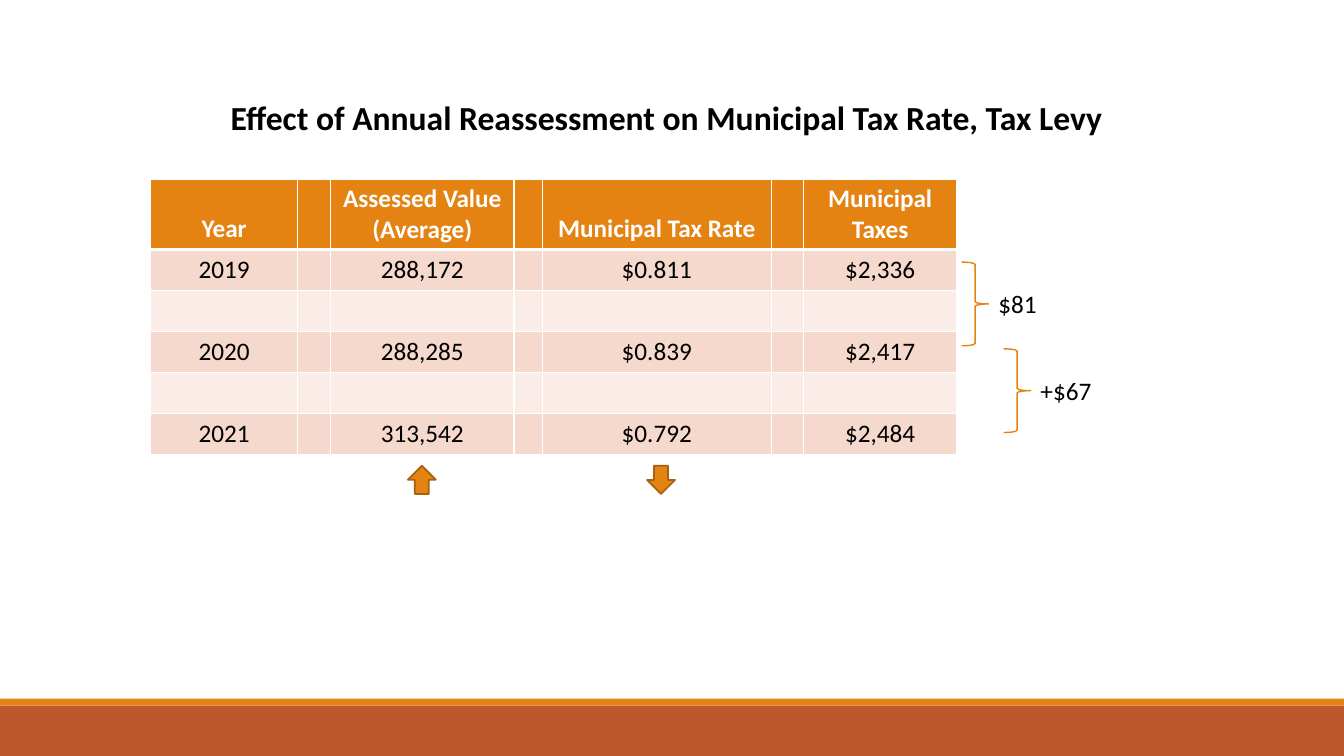
from dataclasses import dataclass

from lxml import etree
from pptx import Presentation
from pptx import util as u
from pptx.dml.color import RGBColor
from pptx.enum import shapes, text
from pptx.oxml.ns import qn


@dataclass(frozen=True)
class Theme:
    font: str = "Calibri"
    title_size: int = 24
    body_size: int = 18
    ink: str = "000000"
    paper: str = "FFFFFF"
    orange: str = "E48312"
    orange_dark: str = "A9610D"
    rust: str = "BD582C"
    band_dark: str = "F5D9CC"
    band_light: str = "FAEDE7"


class SlideBuilder:
    """Places elements; every length is a percentage of the slide's size."""

    def __init__(self, presentation, theme):
        self.theme = theme
        self.width = presentation.slide_width
        self.height = presentation.slide_height
        self.slide = presentation.slides.add_slide(presentation.slide_layouts[6])

    def across(self, share):
        return round(self.width * share / 100)

    def down(self, share):
        return round(self.height * share / 100)

    def box(self, left, top, width, height):
        return self.across(left), self.down(top), self.across(width), self.down(height)

    def shape(self, kind, place, fill=None, line=None, weight=1):
        shape = self.slide.shapes.add_shape(kind, *self.box(*place))
        shape.shadow.inherit = False
        if fill:
            shape.fill.solid()
            shape.fill.fore_color.rgb = RGBColor.from_string(fill)
        else:
            shape.fill.background()
        if line:
            shape.line.color.rgb = RGBColor.from_string(line)
            shape.line.width = u.Pt(weight)
        else:
            shape.line.fill.background()

    def set_words(self, text_frame, words, size, color, bold=False, align=text.PP_ALIGN.LEFT):
        text_frame.text = words
        for paragraph in text_frame.paragraphs:
            paragraph.alignment = align
            for run in paragraph.runs:
                run.font.name = self.theme.font
                run.font.size = u.Pt(size)
                run.font.bold = bold
                run.font.color.rgb = RGBColor.from_string(color)

    def label(self, words, place, size, bold=False, wrap=False):
        text_frame = self.slide.shapes.add_textbox(*self.box(*place)).text_frame
        text_frame.word_wrap = wrap
        self.set_words(text_frame, words, size, self.theme.ink, bold)

    def borders(self, cell, weights):
        properties = cell._tc.get_or_add_tcPr()
        for index, (side, weight) in enumerate(weights.items()):
            line = etree.Element(qn(f"a:ln{side}"), w=str(u.Pt(weight)))
            fill = etree.SubElement(line, qn("a:solidFill"))
            etree.SubElement(fill, qn("a:srgbClr"), val=self.theme.paper)
            properties.insert(index, line)

    def table(self, rows, left, top, widths, heights):
        theme = self.theme
        place = self.box(left, top, sum(widths), sum(heights))
        table = self.slide.shapes.add_table(len(rows), len(widths), *place).table
        for column, width in zip(table.columns, widths):
            column.width = self.across(width)
        for row, height in zip(table.rows, heights):
            row.height = self.down(height)
        for r, row in enumerate(rows):
            header = r == 0
            band = theme.band_dark if r % 2 else theme.band_light
            for c, words in enumerate(row):
                cell = table.cell(r, c)
                cell.fill.solid()
                cell.fill.fore_color.rgb = RGBColor.from_string(theme.orange if header else band)
                if header:
                    cell.vertical_anchor = text.MSO_ANCHOR.BOTTOM
                self.borders(cell, {"L": 1, "R": 1, "T": 3 if r == 1 else 1, "B": 3 if header else 1})
                self.set_words(cell.text_frame, words, theme.body_size,
                               theme.paper if header else theme.ink, header, text.PP_ALIGN.CENTER)


def spaced(values):
    """Puts an empty narrow column between the values."""
    cells = [""] * (2 * len(values) - 1)
    cells[::2] = values
    return cells


def main():
    presentation = Presentation()
    presentation.slide_width = u.Inches(13.33)
    presentation.slide_height = u.Inches(7.5)
    theme = Theme()
    builder = SlideBuilder(presentation, theme)
    kinds = shapes.MSO_SHAPE

    # Footer bands
    builder.shape(kinds.RECTANGLE, (0, 93.33, 100, 6.67), theme.rust)
    builder.shape(kinds.RECTANGLE, (0, 92.4, 100, 0.93), theme.orange)

    # Title
    builder.label("Effect of Annual Reassessment on Municipal Tax Rate, Tax Levy",
                  (16.43, 12.13, 67.13, 6.67), theme.title_size, bold=True)

    # Tax table, with an empty row between the years
    header = ["Year", "Assessed Value (Average)", "Municipal Tax Rate", "Municipal\nTaxes"]
    years = [
        ["2019", "288,172", "$0.811", "$2,336"],
        ["2020", "288,285", "$0.839", "$2,417"],
        ["2021", "313,542", "$0.792", "$2,484"],
    ]
    empty = [""] * len(header)
    rows = [header, years[0], empty, years[1], empty, years[2]]
    builder.table([spaced(row) for row in rows], 11.2, 23.67,
                  [10.95, 2.45, 13.65, 2.1, 17.05, 2.4, 11.4], [9.2] + [5.43] * 5)

    # Direction of assessed value and of tax rate
    for kind, left in ((kinds.UP_ARROW, 30.35), (kinds.DOWN_ARROW, 48.15)):
        builder.shape(kind, (left, 61.6, 2.08, 3.73), theme.orange, theme.orange_dark, 1.25)

    # Change in taxes from year to year
    for step, (change, width, wrap) in enumerate((("$81", 4.43, False), ("+$67", 6.15, True))):
        left, top = 71.55 + 3.13 * step, 34.67 + 11.47 * step
        builder.shape(kinds.RIGHT_BRACE, (left, top, 2, 11.07), line=theme.orange)
        builder.label(change, (left + 2, top + 2.8, width, 5.33), theme.body_size, wrap=wrap)

    presentation.save("out.pptx")


if __name__ == "__main__":
    main()
